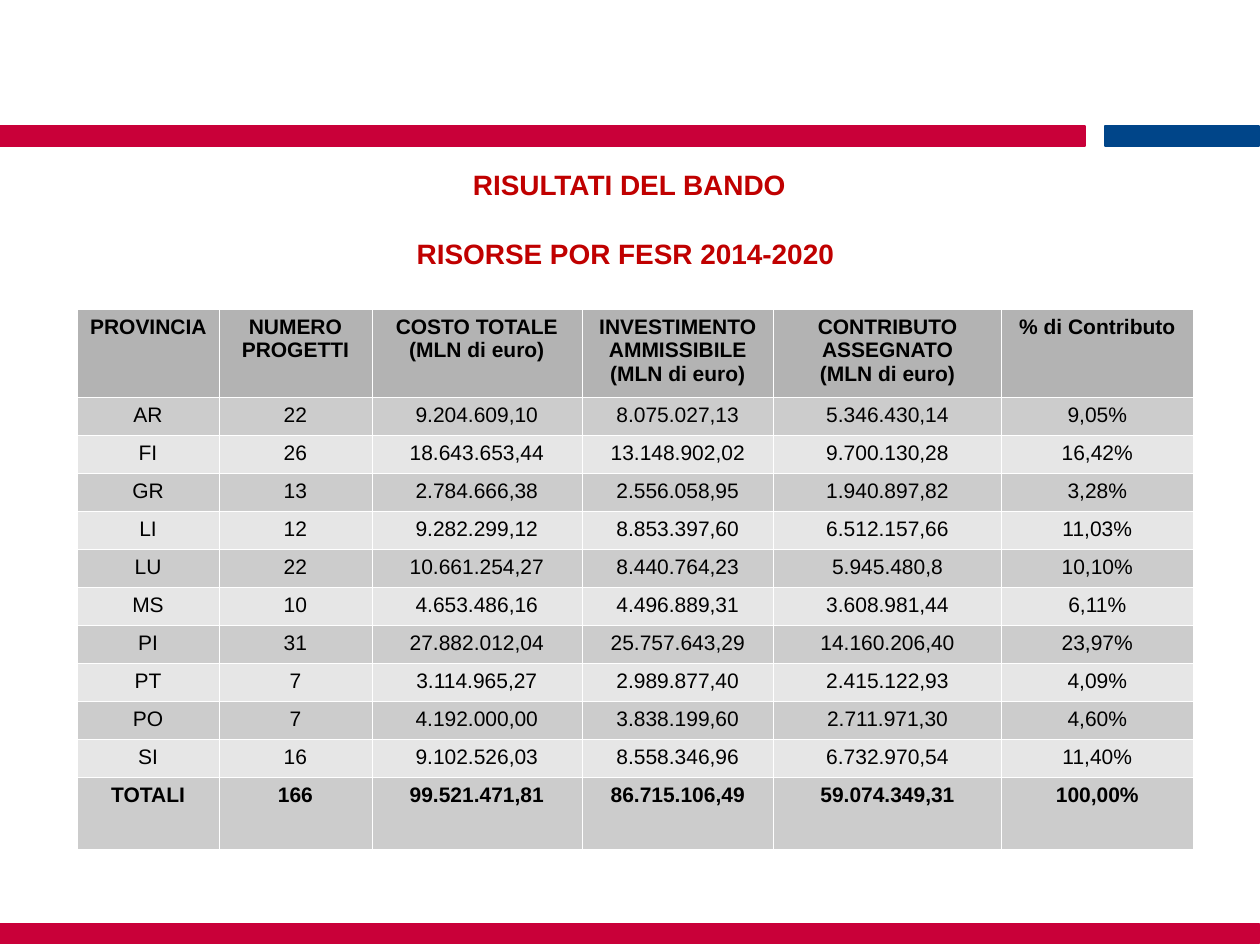
from dataclasses import dataclass

from lxml import etree
from pptx import Presentation
from pptx import util as u
from pptx.dml.color import RGBColor
from pptx.enum import shapes, text
from pptx.oxml.ns import qn

UNIT = u.Inches(0.1)  # the slide is a grid of 100 columns by 75 rows


@dataclass(frozen=True)
class Theme:
    font: str = "Arial"
    title_size: int = 16
    table_size: int = 12
    title: str = "C00000"
    ink: str = "000000"
    red: str = "C90039"
    blue: str = "004589"
    header: str = "B3B3B3"
    bands: tuple = ("CCCCCC", "E6E6E6")
    border: str = "FFFFFF"
    border_width: float = 0.06


THEME = Theme()

TITLE = "RISULTATI DEL BANDO\nRISORSE POR FESR 2014-2020 "
COLUMN_WIDTHS = (11.3, 12.1, 16.7, 15.2, 18.1, 15.2)
HEADER_ROW, BODY_ROW, TOTAL_ROW = 7, 3.02, 5.7
HEADINGS = (
    "PROVINCIA ", "NUMERO PROGETTI", "COSTO TOTALE\n(MLN di euro)",
    "INVESTIMENTO AMMISSIBILE\n(MLN di euro)",
    "CONTRIBUTO ASSEGNATO\n(MLN di euro)", "% di Contributo",
)
PROVINCES = (
    ("AR", "22", "9.204.609,10", "8.075.027,13", "5.346.430,14", "9,05%"),
    ("FI", "26", "18.643.653,44", "13.148.902,02", "9.700.130,28", "16,42%"),
    ("GR", "13", "2.784.666,38", "2.556.058,95", "1.940.897,82", "3,28%"),
    ("LI", "12", "9.282.299,12", "8.853.397,60", "6.512.157,66", "11,03%"),
    ("LU", "22", "10.661.254,27", "8.440.764,23", "5.945.480,8", "10,10%"),
    ("MS", "10", "4.653.486,16", "4.496.889,31", "3.608.981,44", "6,11%"),
    ("PI", "31", "27.882.012,04", "25.757.643,29", "14.160.206,40", "23,97%"),
    ("PT", "7", "3.114.965,27", "2.989.877,40", "2.415.122,93", "4,09%"),
    ("PO", "7", "4.192.000,00", "3.838.199,60", "2.711.971,30", "4,60%"),
    ("SI", "16", "9.102.526,03", "8.558.346,96", "6.732.970,54", "11,40%"),
)
TOTALS = ("TOTALI", "166", "99.521.471,81", "86.715.106,49",
          "59.074.349,31", "100,00%")


def grid(*units):
    return [round(value * UNIT) for value in units]


def write(frame, words, *, size, color, bold=False, gap=0):
    """Fill a frame with centred paragraphs, one per line of words."""
    frame.text = words
    for index, paragraph in enumerate(frame.paragraphs):
        paragraph.alignment = text.PP_ALIGN.CENTER
        paragraph.space_before = u.Pt(gap if index else 0)
        for run in paragraph.runs:
            run.font.name = THEME.font
            run.font.size = u.Pt(size)
            run.font.bold = bold
            run.font.color.rgb = RGBColor.from_string(color)


def add_bar(slide, box, color):
    bar = slide.shapes.add_shape(shapes.MSO_SHAPE.RECTANGLE, *grid(*box))
    bar.shadow.inherit = False
    bar.fill.solid()
    bar.fill.fore_color.rgb = RGBColor.from_string(color)
    bar.line.color.rgb = RGBColor.from_string(color)
    bar.line.width = u.Pt(1)


def add_bands(slide, box):
    """Place the split band near the top of the box and one along its foot."""
    left, top, width, height = box
    thickness, blue_width, gap = 1.6, 12.2, 1.6
    red_width = width - blue_width - gap
    upper = top + 10
    add_bar(slide, (left, upper, red_width, thickness), THEME.red)
    add_bar(slide, (left, top + height - thickness, width, thickness), THEME.red)
    add_bar(slide, (left + red_width + gap, upper, blue_width, thickness), THEME.blue)


def place_title(slide, box):
    title = slide.shapes.title
    title.left, title.top, title.width, title.height = grid(*box)
    frame = title.text_frame
    frame.word_wrap = True
    frame.auto_size = text.MSO_AUTO_SIZE.NONE
    frame.vertical_anchor = text.MSO_ANCHOR.TOP
    write(frame, TITLE, size=THEME.title_size, color=THEME.title, bold=True, gap=20)


def add_borders(cell):
    properties = cell._tc.get_or_add_tcPr()
    for position, side in enumerate(("lnL", "lnR", "lnT", "lnB")):
        line = etree.Element(qn(f"a:{side}"), w=str(u.Pt(THEME.border_width)))
        fill = etree.SubElement(line, qn("a:solidFill"))
        etree.SubElement(fill, qn("a:srgbClr"), val=THEME.border)
        properties.insert(position, line)


def add_results(slide, box):
    rows = (HEADINGS, *PROVINCES, TOTALS)
    heights = (HEADER_ROW, *[BODY_ROW] * len(PROVINCES), TOTAL_ROW)
    results = slide.shapes.add_table(len(rows), len(HEADINGS), *grid(*box)).table
    scale = box[2] / sum(COLUMN_WIDTHS)
    for column, width in zip(results.columns, COLUMN_WIDTHS):
        column.width = round(width * scale * UNIT)
    for number, (values, height) in enumerate(zip(rows, heights)):
        results.rows[number].height = round(height * UNIT)
        fill = THEME.bands[(number - 1) % 2] if number else THEME.header
        for place, value in enumerate(values):
            cell = results.cell(number, place)
            cell.fill.solid()
            cell.fill.fore_color.rgb = RGBColor.from_string(fill)
            add_borders(cell)
            write(cell.text_frame, value, size=THEME.table_size, color=THEME.ink,
                  bold=values in (HEADINGS, TOTALS))


def main():
    deck = Presentation()
    deck.slide_width, deck.slide_height = grid(100, 75)
    slide = deck.slides.add_slide(deck.slide_layouts[5])
    add_bands(slide, (0, 0, 99.9, 74.9))
    place_title(slide, (3.5, 12.8, 92.9, 9))
    add_results(slide, (6.1, 24.5, 88.6, 42.9))
    deck.save("out.pptx")


if __name__ == "__main__":
    main()
